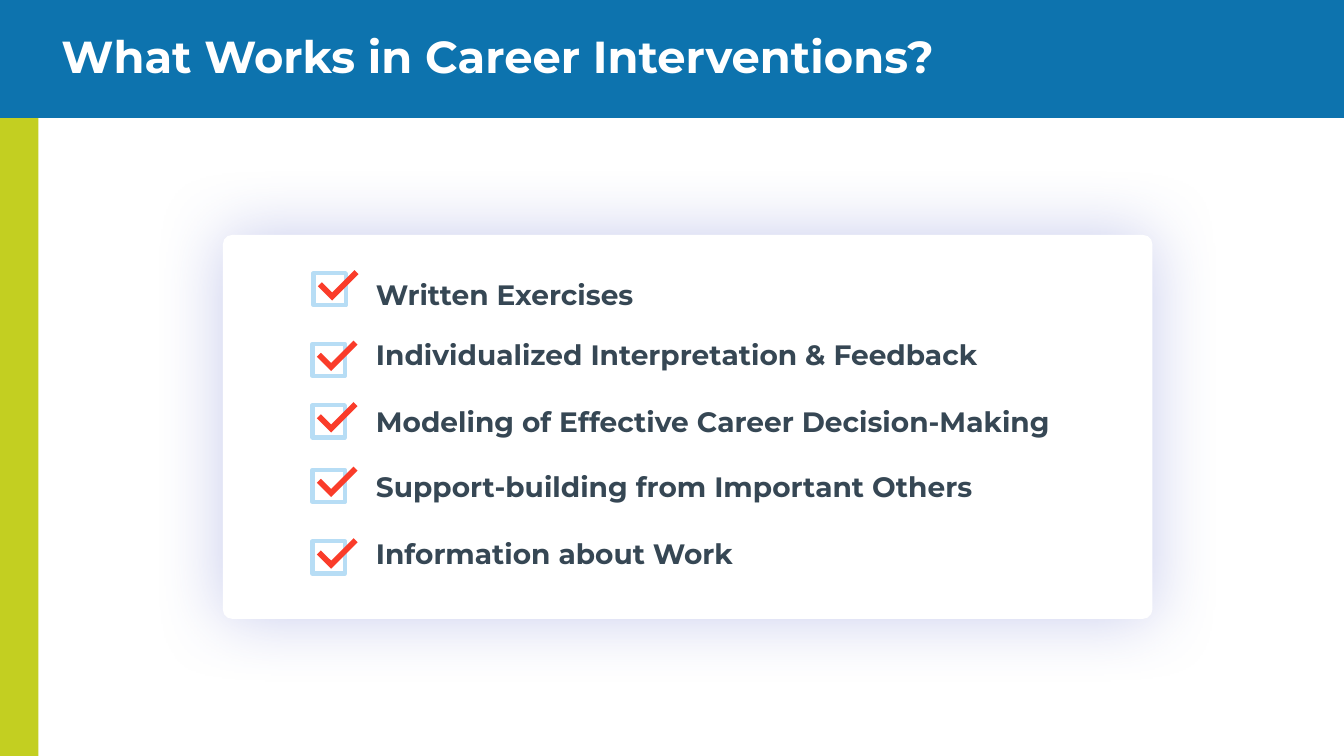
from lxml.etree import SubElement
from pptx import Presentation
from pptx.dml.color import RGBColor
from pptx.enum.shapes import MSO_SHAPE
from pptx.enum.text import MSO_ANCHOR, MSO_AUTO_SIZE
from pptx.oxml.ns import qn
from pptx.util import Pt

PX = 9144
FONT = "Montserrat"
BLUE, LIME, WHITE = "0D73AE", "C3CF21", "FFFFFF"
INK, BOX_BLUE, TICK_RED, GLOW = "364754", "B7DDF5", "FA3C2A", "4956C4"
TEXT_LEFT, BOX_SIDE = 363, 32

CHECKLIST = [
    ("Written Exercises", 270, 740, 311, 271),
    ("Individualized Interpretation & Feedback", 330, 869, 310, 341),
    ("Modeling of Effective Career Decision-Making", 396, 869, 310, 402),
    ("Support-building from Important Others", 461, 869, 310, 466),
    ("Information about Work", 527, 869, 310, 537),
]


def color(value):
    """Turn a hex string into a colour."""
    return RGBColor.from_string(value)


class SlidePainter:
    """Hold the style and the current slide."""

    def __init__(self, page):
        """Keep the slide to draw on."""
        self.page = page

    def shape(self, kind, at, fill=None, line=None, adjust=(), rotation=0):
        """Add a preset shape."""
        shape = self.page.shapes.add_shape(kind, *(v * PX for v in at))
        shape.shadow.inherit = False
        shape.rotation = rotation
        for index, value in enumerate(adjust):
            shape.adjustments[index] = value
        if fill:
            shape.fill.solid()
            shape.fill.fore_color.rgb = color(fill)
        else:
            shape.fill.background()
        if line:
            shape.line.color.rgb = color(line)
            shape.line.width = Pt(3)
        else:
            shape.line.fill.background()
        return shape

    def glow_card(self, at):
        """Add a white rounded card with a soft shadow on all sides."""
        card = self.shape(MSO_SHAPE.ROUNDED_RECTANGLE, at, WHITE, adjust=[0.025])
        effects = card._element.spPr.find(qn("a:effectLst"))
        shadow = SubElement(effects, qn("a:outerShdw"), blurRad=str(Pt(50)),
                            dist="0", dir="0", algn="ctr", rotWithShape="0")
        tint = SubElement(shadow, qn("a:srgbClr"), val=GLOW)
        SubElement(tint, qn("a:alpha"), val="30000")

    def text(self, words, at, size, ink):
        """Add a line of bold text and return its frame."""
        box = self.page.shapes.add_textbox(*(v * PX for v in at))
        frame = box.text_frame
        frame.word_wrap = True
        span = frame.paragraphs[0].add_run()
        span.text = words
        span.font.name = FONT
        span.font.size = Pt(size)
        span.font.bold = True
        span.font.color.rgb = color(ink)
        return frame

    def title(self, words, at, indent):
        """Add the slide title, indented from the left edge."""
        frame = self.text(words, at, 32, WHITE)
        frame.vertical_anchor = MSO_ANCHOR.BOTTOM
        frame.margin_left = indent * PX
        frame.paragraphs[0].line_spacing = 0.9

    def checkbox(self, left, top):
        """Add a square with a tick made from a turned corner."""
        self.shape(MSO_SHAPE.RECTANGLE, (left, top, BOX_SIDE, BOX_SIDE), line=BOX_BLUE)
        self.shape(MSO_SHAPE.CORNER, (left + 6, top - 3, 37, 20), TICK_RED,
                   adjust=[0.28, 0.28], rotation=315)

    def check_item(self, words, top, width, box_left, box_top):
        """Add a checkbox and its label."""
        self.checkbox(box_left, box_top)
        frame = self.text(words, (TEXT_LEFT, top, width, 44), 20, INK)
        frame.auto_size = MSO_AUTO_SIZE.SHAPE_TO_FIT_TEXT


def main():
    """Build the slide and save it."""
    deck = Presentation()
    deck.slide_width, deck.slide_height = 1333 * PX, 750 * PX
    painter = SlidePainter(deck.slides.add_slide(deck.slide_layouts[6]))
    painter.shape(MSO_SHAPE.RECTANGLE, (0, 0, 38, 750), LIME)
    painter.shape(MSO_SHAPE.RECTANGLE, (-2, -1, 1335, 118), BLUE)
    painter.title("What Works in Career Interventions?", (0, 28, 1335, 59), 61)
    painter.glow_card((221, 233, 922, 381))
    for item in CHECKLIST:
        painter.check_item(*item)
    deck.save("out.pptx")


if __name__ == "__main__":
    main()
